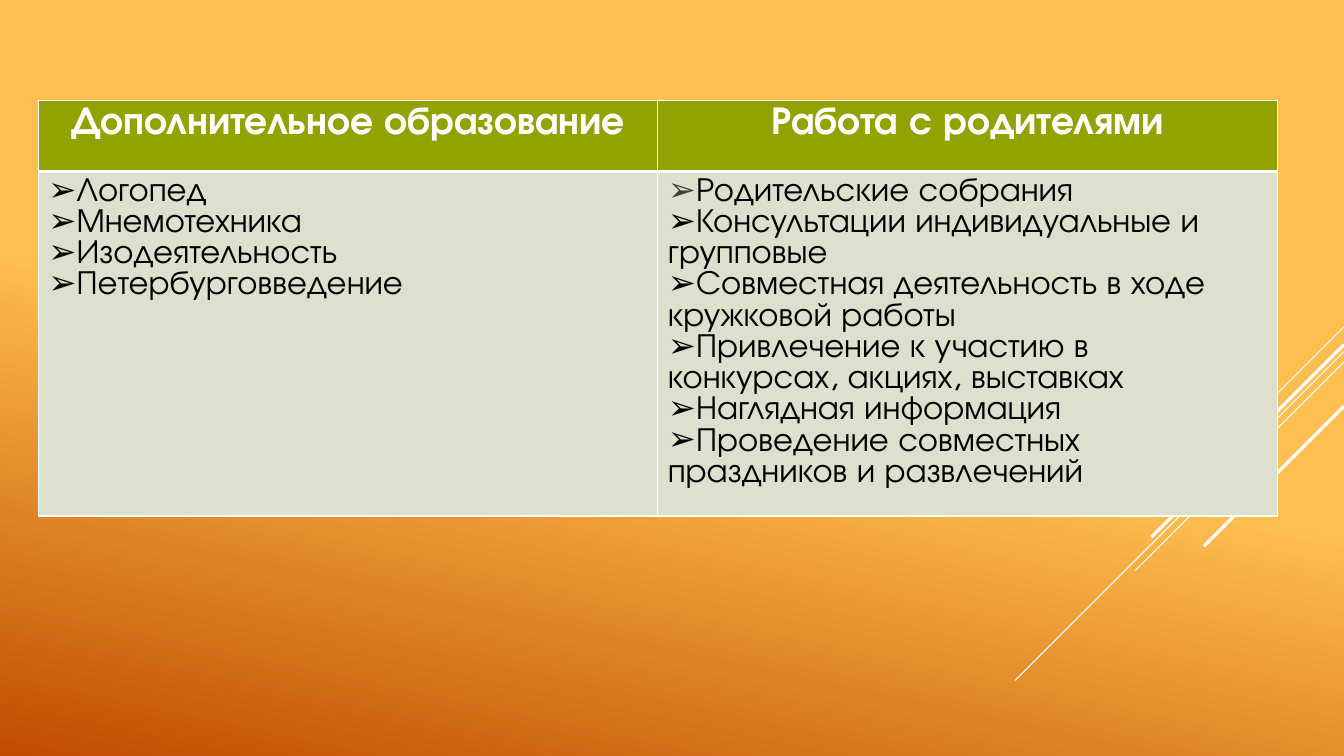
from pptx import Presentation
from pptx.dml.color import RGBColor
from pptx.enum.shapes import MSO_CONNECTOR
from pptx.enum.text import PP_ALIGN
from pptx.oxml.ns import qn
from pptx.util import Inches, Pt
from lxml.etree import SubElement

COLORS = {"amber": "FFBF50", "rust": "C04D00", "white": "FFFFFF", "olive": "92A200",
          "sage": "DCE0CC", "black": "000000", "gray": "404040"}
FONT = "TeX Gyre Adventor"
SLIDE_W, SLIDE_H = 13.33, 7.5

COLUMNS = [
    ("Дополнительное образование",
     ["Логопед", "Мнемотехника", "Изодеятельность", "Петербурговведение"]),
    ("Работа с родителями",
     ["Родительские собрания",
      "Консультации индивидуальные и групповые",
      "Совместная деятельность в ходе кружковой работы",
      "Привлечение к участию в конкурсах, акциях, выставках",
      "Наглядная информация",
      "Проведение совместных праздников и развлечений"]),
]
# Diagonals: start y on the right edge, run to the left, width in points
DIAGONALS = [(3.24, 1, 0.75), (3.49, 3.26, 0.75), (3.59, 2.07, 0.75),
             (3.42, 1.91, 2.25), (4.03, 1.39, 2.25)]


def rgb(name):
    return RGBColor.from_string(COLORS[name])


def add_background(slide):
    fill = slide.background.fill
    fill.gradient()
    fill.gradient_angle = 258
    for stop, (position, color) in zip(fill.gradient_stops, [(0.51, "amber"), (1, "rust")]):
        stop.position = position
        stop.color.rgb = rgb(color)


def add_diagonals(slide, right):
    for y, run, width in DIAGONALS:
        line = slide.shapes.add_connector(
            MSO_CONNECTOR.STRAIGHT, Inches(right), Inches(y),
            Inches(right - run), Inches(y + run))
        line.line.color.rgb = rgb("white")
        line.line.width = Pt(width)
        SubElement(line._element.spPr, qn("a:effectLst"))


def set_borders(cell, **widths):
    tc_pr = cell._tc.get_or_add_tcPr()
    for i, side in enumerate(("L", "R", "T", "B")):
        ln = tc_pr.makeelement(qn(f"a:ln{side}"), {"w": str(Pt(widths.get(side, 1)))})
        solid = SubElement(ln, qn("a:solidFill"))
        SubElement(solid, qn("a:srgbClr"), val=COLORS["white"])
        tc_pr.insert(i, ln)


def add_bullet(p, color):
    p_pr = p._p.get_or_add_pPr()
    p_pr.set("marL", "0")
    p_pr.set("indent", "0")
    bullet_color = SubElement(p_pr, qn("a:buClr"))
    SubElement(bullet_color, qn("a:srgbClr"), val=COLORS[color])
    SubElement(p_pr, qn("a:buFont"), typeface=FONT)
    SubElement(p_pr, qn("a:buChar"), char="➢")


def add_text(p, text, size, color, bold, spacing):
    p.line_spacing = Pt(spacing)
    r = p.add_run()
    r.text = text
    r.font.name = FONT
    r.font.size = Pt(size)
    r.font.bold = bold
    r.font.color.rgb = rgb(color)


def add_work_table(slide, left, top, width, row_heights):
    frame = slide.shapes.add_table(
        len(row_heights), len(COLUMNS), Inches(left), Inches(top),
        Inches(width), Inches(sum(row_heights)))
    table = frame.table
    for row, height in zip(table.rows, row_heights):
        row.height = Inches(height)
    for i, (heading, items) in enumerate(COLUMNS):
        # Heading
        head = table.cell(0, i)
        head.fill.solid()
        head.fill.fore_color.rgb = rgb("olive")
        set_borders(head, B=3)
        p = head.text_frame.paragraphs[0]
        p.alignment = PP_ALIGN.CENTER
        add_text(p, heading, 28, "white", True, 25.5)

        # Bulleted list
        body = table.cell(1, i)
        body.fill.solid()
        body.fill.fore_color.rgb = rgb("sage")
        set_borders(body, T=3)
        tf = body.text_frame
        for j, item in enumerate(items):
            p = tf.add_paragraph() if j else tf.paragraphs[0]
            add_text(p, item, 24, "black", False, 22.3)
            add_bullet(p, "gray" if i == 1 and j == 0 else "black")


def main():
    prs = Presentation()
    prs.slide_width, prs.slide_height = Inches(SLIDE_W), Inches(SLIDE_H)
    slide = prs.slides.add_slide(prs.slide_layouts[6])
    add_background(slide)
    add_diagonals(slide, SLIDE_W)
    add_work_table(slide, 0.38, 1, 12.29, [0.7, 3.42])
    prs.save("out.pptx")


if __name__ == "__main__":
    main()
